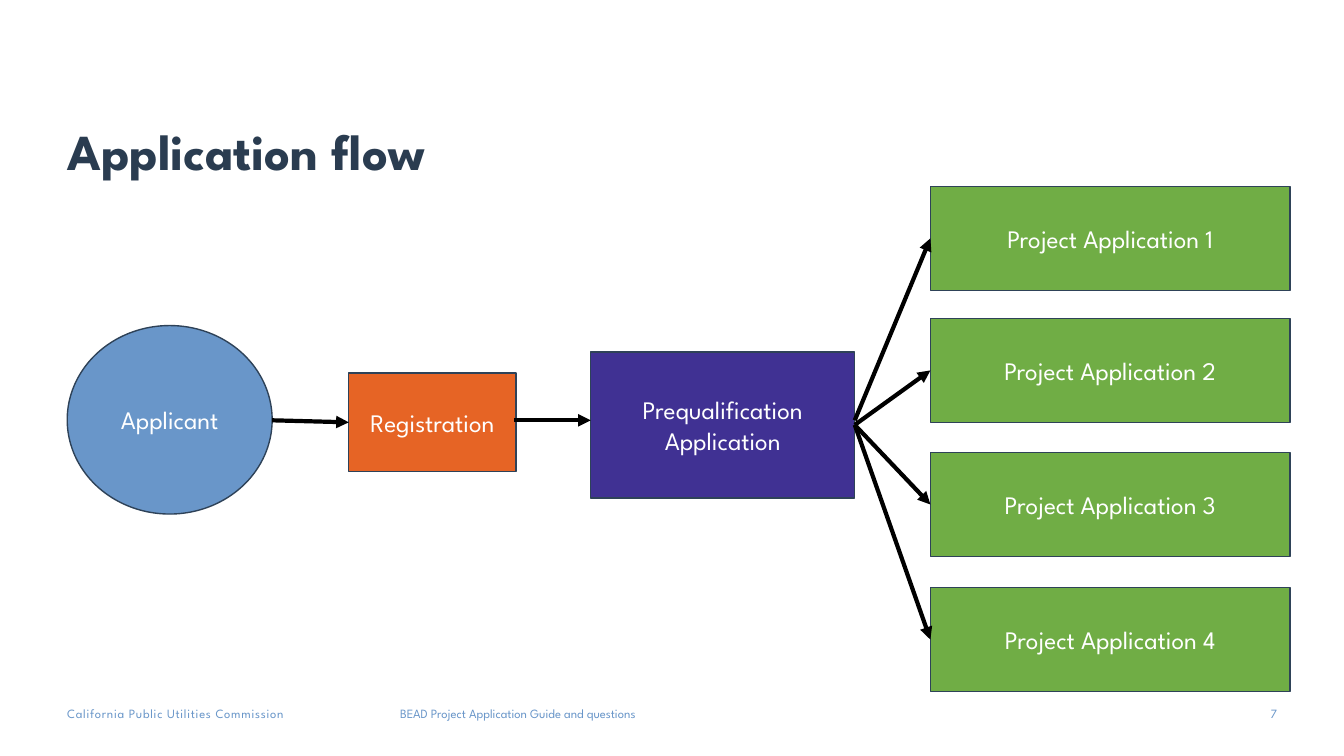
import dataclasses

import lxml.etree
import pptx
import pptx.dml.color
import pptx.enum.shapes
import pptx.enum.text
import pptx.oxml.ns
import pptx.util

ALIGN = pptx.enum.text.PP_ALIGN
ANCHOR = pptx.enum.text.MSO_ANCHOR
SHAPE = pptx.enum.shapes.MSO_SHAPE
RIGHT_SIDE, LEFT_SIDE = 3, 1


@dataclasses.dataclass(frozen=True)
class Theme:
    font: str = "League Spartan"
    heading: str = "2A3C50"
    blue: str = "6996C9"
    orange: str = "E66425"
    purple: str = "403193"
    green: str = "70AD45"
    outline: str = "2E4258"
    arrow: str = "000000"
    light: str = "FFFFFF"
    title_size: int = 36
    label_size: int = 18
    footer_size: int = 9
    outline_width: int = 1
    arrow_width: int = 3


def color(code):
    return pptx.dml.color.RGBColor.from_string(code)


def write(frame, text, *, font, size, ink, bold=False, align=ALIGN.LEFT,
          anchor=ANCHOR.TOP, spacing=None, tracking=None, margins=None):
    frame.word_wrap = True
    frame.auto_size = pptx.enum.text.MSO_AUTO_SIZE.NONE
    frame.vertical_anchor = anchor
    if margins is not None:
        (frame.margin_left, frame.margin_top,
         frame.margin_right, frame.margin_bottom) = map(pptx.util.Inches, margins)
    para = frame.paragraphs[0]
    para.alignment = align
    if spacing:
        para.line_spacing = spacing
    span = para.add_run()
    span.text = text
    span.font.name = font
    span.font.size = pptx.util.Pt(size)
    span.font.bold = bold
    span.font.color.rgb = color(ink)
    if tracking:
        span.font._element.set("spc", str(round(tracking * 100)))


class FlowPage:
    columns, rows = 80, 45

    def __init__(self, deck, theme):
        self.theme = theme
        self.column = deck.slide_width / self.columns
        self.row = deck.slide_height / self.rows
        self.page = deck.slides.add_slide(deck.slide_layouts[5])
        self.shapes = self.page.shapes

    def point(self, column, row):
        return round(column * self.column), round(row * self.row)

    def area(self, left, top, width, height):
        return self.point(left, top) + self.point(width, height)

    def title(self, text, *place):
        box = self.shapes.title
        box.left, box.top, box.width, box.height = self.area(*place)
        write(box.text_frame, text, font=self.theme.font, size=self.theme.title_size,
              ink=self.theme.heading, bold=True, anchor=ANCHOR.BOTTOM, spacing=0.9,
              margins=(0, 0.05, 0.1, 0.05))

    def footer(self, text, *place, **style):
        box = self.shapes.add_textbox(*self.area(*place))
        write(box.text_frame, text, font=self.theme.font, size=self.theme.footer_size,
              ink=self.theme.blue, margins=(0, 0, 0, 0), **style)

    def step(self, text, fill, *place, kind=SHAPE.RECTANGLE):
        box = self.shapes.add_shape(kind, *self.area(*place))
        box.shadow.inherit = False
        box.fill.solid()
        box.fill.fore_color.rgb = color(fill)
        box.line.color.rgb = color(self.theme.outline)
        box.line.width = pptx.util.Pt(self.theme.outline_width)
        write(box.text_frame, text, font=self.theme.font, size=self.theme.label_size,
              ink=self.theme.light, align=ALIGN.CENTER, anchor=ANCHOR.MIDDLE)
        return box

    def arrow(self, start=(0, 0), end=(0, 0), source=None, target=None):
        line = self.shapes.add_connector(
            pptx.enum.shapes.MSO_CONNECTOR.STRAIGHT,
            *self.point(*start), *self.point(*end))
        if source is not None:
            line.begin_connect(source, RIGHT_SIDE)
        if target is not None:
            line.end_connect(target, LEFT_SIDE)
        line.line.color.rgb = color(self.theme.arrow)
        line.line.width = pptx.util.Pt(self.theme.arrow_width)
        qualify = pptx.oxml.ns.qn
        lxml.etree.SubElement(line.line._get_or_add_ln(), qualify("a:tailEnd"),
                              type="triangle")
        lxml.etree.SubElement(line._element.spPr, qualify("a:effectLst"))


def main():
    deck = pptx.Presentation()
    deck.slide_width = pptx.util.Inches(13.33)
    deck.slide_height = pptx.util.Inches(7.5)
    theme = Theme()
    flow = FlowPage(deck, theme)

    flow.title("Application flow", 4, 2.4, 72, 8.7)
    flow.footer("California Public Utilities Commission", 4, 42, 19.26, 0.9, tracking=0.5)
    flow.footer("BEAD Project Application Guide and questions", 23.82, 42, 38.34, 1.38)
    flow.footer("7", 73.5, 42, 2.52, 1.2, align=ALIGN.RIGHT)

    flow.step("Applicant", theme.blue, 4, 19.38, 12.2, 11.22, kind=SHAPE.OVAL)
    registration = flow.step("Registration", theme.orange, 20.76, 22.2, 9.96, 5.88)
    prequalification = flow.step("Prequalification Application", theme.purple,
                                 35.16, 20.94, 15.72, 8.7)
    projects = [
        flow.step(f"Project Application {number}", theme.green, 55.38, top, 21.42, 6.18)
        for number, top in enumerate((11.1, 18.96, 26.94, 34.98), start=1)
    ]

    axis = 25.02
    flow.arrow(start=(16.2, axis), target=registration)
    flow.arrow(start=(30.6, axis), end=(35.16, axis))
    flow.arrow(start=(50.88, axis), target=projects[0])
    for project in projects[1:]:
        flow.arrow(source=prequalification, target=project)

    deck.save("out.pptx")


if __name__ == "__main__":
    main()
